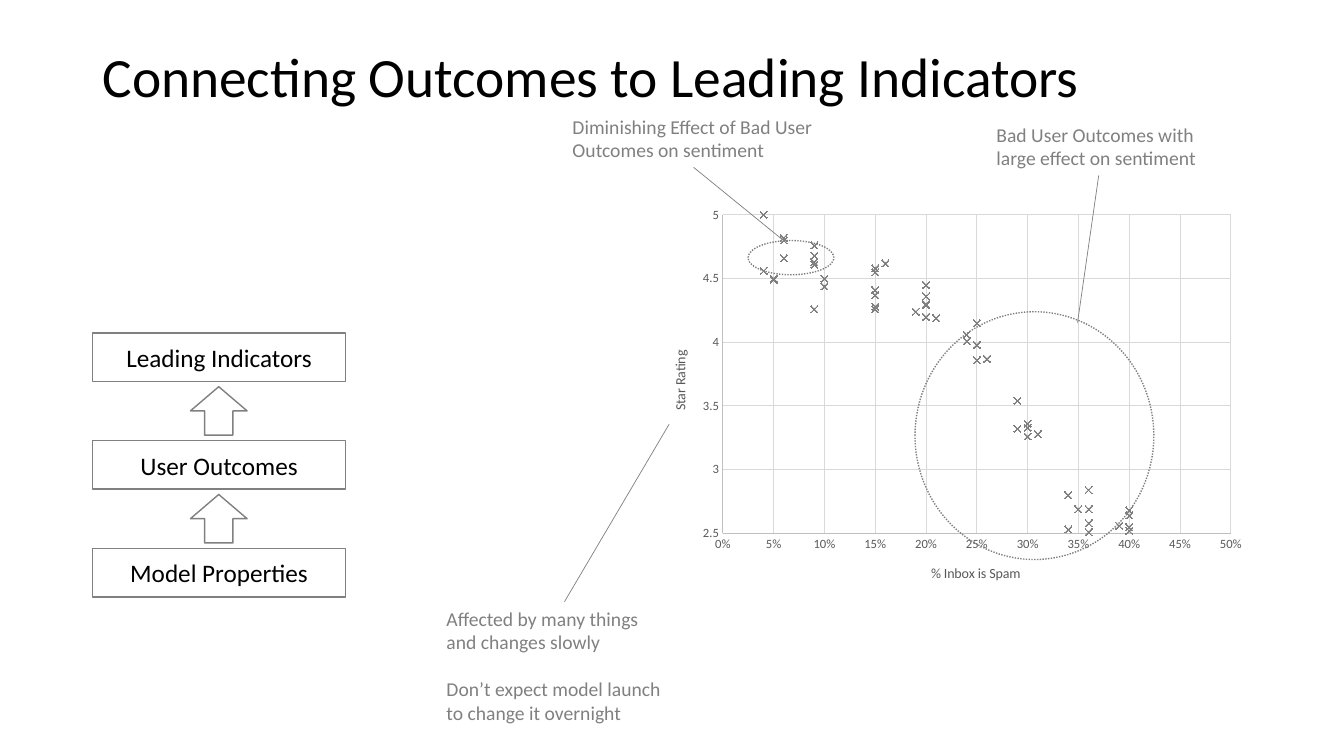
import dataclasses

import lxml.etree
import pptx
import pptx.chart.data
import pptx.dml.color
import pptx.enum.chart
import pptx.enum.dml
import pptx.enum.shapes
import pptx.enum.text
import pptx.oxml
import pptx.oxml.ns
import pptx.util

Pt = pptx.util.Pt
SHAPE = pptx.enum.shapes.MSO_SHAPE
ALIGN = pptx.enum.text.PP_ALIGN
ANCHOR = pptx.enum.text.MSO_ANCHOR


@dataclasses.dataclass(frozen=True)
class Theme:
    font: str = "Calibri"
    ink: str = "000000"
    gray: str = "808080"
    chart_text: str = "595959"
    axis: str = "BFBFBF"
    grid: str = "D9D9D9"
    title_size: float = 39.6
    box_size: float = 18
    note_size: float = 14
    axis_title_size: float = 10
    tick_size: float = 9


SPAM_SHARES = [
    0.05, 0.05, 0.06, 0.06, 0.06, 0.04, 0.04, 0.09, 0.09, 0.09, 0.1, 0.09, 0.1, 0.09,
    0.15, 0.16, 0.15, 0.15, 0.15, 0.15, 0.15, 0.19, 0.2, 0.2, 0.21, 0.2, 0.2, 0.2,
    0.24, 0.25, 0.24, 0.26, 0.24, 0.25, 0.25, 0.3, 0.31, 0.3, 0.29, 0.3, 0.29, 0.3,
    0.36, 0.36, 0.36, 0.34, 0.35, 0.36, 0.34, 0.4, 0.4, 0.4, 0.4, 0.4, 0.4, 0.39,
]
STAR_RATINGS = [
    4.5, 4.49, 4.8, 4.82, 4.66, 4.56, 5, 4.63, 4.76, 4.68, 4.5, 4.26, 4.44, 4.61,
    4.37, 4.62, 4.28, 4.41, 4.55, 4.26, 4.58, 4.24, 4.36, 4.2, 4.19, 4.29, 4.3, 4.45,
    4.06, 3.98, 4.01, 3.87, 4.06, 4.15, 3.86, 3.26, 3.28, 3.33, 3.54, 3.36, 3.32, 3.33,
    2.84, 2.58, 2.69, 2.8, 2.69, 2.51, 2.53, 2.36, 2.68, 2.64, 2.52, 2.55, 2.41, 2.56,
]


def rgb(color):
    return pptx.dml.color.RGBColor.from_string(color)


def set_font(font, name, size, color):
    font.name, font.size, font.bold = name, Pt(size), False
    font.color.rgb = rgb(color)


def set_line(line, color, width, dash=None):
    line.color.rgb = rgb(color)
    line.width = Pt(width)
    if dash:
        line.dash_style = dash


def write(frame, *paragraphs, font, size, color, align=ALIGN.LEFT,
          anchor=ANCHOR.TOP, spacing=None, gap=0):
    frame.word_wrap = True
    frame.vertical_anchor = anchor
    for index, words in enumerate(paragraphs):
        paragraph = frame.add_paragraph() if index else frame.paragraphs[0]
        paragraph.alignment = align
        paragraph.line_spacing = spacing
        paragraph.space_before = Pt(gap if index else 0)
        run = paragraph.add_run()
        run.text = words
        set_font(run.font, font, size, color)


def manual_layout(x, y, w=None, h=None):
    layout = pptx.oxml.parse_xml(f"<c:layout {pptx.oxml.ns.nsdecls('c')}><c:manualLayout/></c:layout>")
    manual = layout[0]
    settings = {"xMode": "edge", "yMode": "edge", "x": x, "y": y}
    if w:
        settings = {"layoutTarget": "inner", **settings, "w": w, "h": h}
    for tag, value in settings.items():
        lxml.etree.SubElement(manual, pptx.oxml.ns.qn(f"c:{tag}")).set("val", str(value))
    return layout


def drop_layout(parent):
    for old in parent.findall(pptx.oxml.ns.qn("c:layout")):
        parent.remove(old)


class SlideBuilder:
    def __init__(self, slide, theme):
        self.slide = slide
        self.theme = theme

    def title(self, words, left, top, width, height):
        heading = self.slide.shapes.title
        heading.left, heading.top = Pt(left), Pt(top)
        heading.width, heading.height = Pt(width), Pt(height)
        heading.text_frame.auto_size = pptx.enum.text.MSO_AUTO_SIZE.NONE
        write(heading.text_frame, words, font=self.theme.font, size=self.theme.title_size,
              color=self.theme.ink, anchor=ANCHOR.MIDDLE, spacing=0.9)

    def outline(self, kind, left, top, width, height, label=None, dash=None):
        figure = self.slide.shapes.add_shape(kind, Pt(left), Pt(top), Pt(width), Pt(height))
        figure.shadow.inherit = False
        figure.fill.background()
        set_line(figure.line, self.theme.gray, 1, dash)
        if label:
            write(figure.text_frame, label, font=self.theme.font, size=self.theme.box_size,
                  color=self.theme.ink, align=ALIGN.CENTER, anchor=ANCHOR.MIDDLE)

    def region(self, left, top, width, height):
        self.outline(SHAPE.OVAL, left, top, width, height,
                     dash=pptx.enum.dml.MSO_LINE.ROUND_DOT)

    def note(self, left, top, width, height, *paragraphs):
        remark = self.slide.shapes.add_textbox(Pt(left), Pt(top), Pt(width), Pt(height))
        write(remark.text_frame, *paragraphs, font=self.theme.font, size=self.theme.note_size,
              color=self.theme.gray, gap=16.8)

    def pointer(self, x1, y1, x2, y2):
        pointer = self.slide.shapes.add_connector(
            pptx.enum.shapes.MSO_CONNECTOR.STRAIGHT, Pt(x1), Pt(y1), Pt(x2), Pt(y2))
        set_line(pointer.line, self.theme.gray, 0.5)
        lxml.etree.SubElement(pointer._element.spPr, pptx.oxml.ns.qn("a:effectLst"))

    def axis(self, axis, title, title_at, low, high, step, number_format):
        theme = self.theme
        axis.minimum_scale, axis.maximum_scale, axis.major_unit = low, high, step
        axis.major_tick_mark = axis.minor_tick_mark = pptx.enum.chart.XL_TICK_MARK.NONE
        axis.has_major_gridlines = True
        set_line(axis.major_gridlines.format.line, theme.grid, 0.75)
        set_line(axis.format.line, theme.axis, 0.75)
        set_font(axis.tick_labels.font, theme.font, theme.tick_size, theme.chart_text)
        axis.tick_labels.number_format = number_format
        axis.tick_labels.number_format_is_linked = False
        caption = axis.axis_title.text_frame.paragraphs[0].add_run()
        caption.text = title
        set_font(caption.font, theme.font, theme.axis_title_size, theme.chart_text)
        heading = axis.axis_title._element
        drop_layout(heading)
        heading.find(pptx.oxml.ns.qn("c:tx")).addnext(manual_layout(*title_at))

    def scatter(self, left, top, width, height):
        ratings = pptx.chart.data.XyChartData()
        points = ratings.add_series("Series 1")
        for spam, stars in zip(SPAM_SHARES, STAR_RATINGS):
            points.add_data_point(spam, stars)
        chart = self.slide.shapes.add_chart(
            pptx.enum.chart.XL_CHART_TYPE.XY_SCATTER,
            Pt(left), Pt(top), Pt(width), Pt(height), ratings).chart
        chart.has_title = chart.has_legend = False
        set_font(chart.font, self.theme.font, self.theme.axis_title_size, self.theme.ink)
        chart.plots[0].vary_by_categories = False
        series = chart.plots[0].series[0]
        series.smooth = False
        series.format.line.fill.background()
        series.marker.style = pptx.enum.chart.XL_MARKER_STYLE.X
        series.marker.size = 5
        series.marker.format.fill.background()
        set_line(series.marker.format.line, self.theme.gray, 0.75)
        self.axis(chart.category_axis, "% Inbox is Spam", (0.46, 0.9), 0, 0.5, 0.05, "0%")
        self.axis(chart.value_axis, "Star Rating", (0.03, 0.37), 2.5, 5, 0.5, "General")
        plot_area = chart._chartSpace.chart.plotArea
        drop_layout(plot_area)
        plot_area.insert(0, manual_layout(0.12, 0.04, 0.84, 0.79))


def main():
    deck = pptx.Presentation()
    deck.slide_width, deck.slide_height = Pt(960), Pt(540)
    builder = SlideBuilder(deck.slides.add_slide(deck.slide_layouts[5]), Theme())
    builder.title("Connecting Outcomes to Leading Indicators", 66, 29, 729, 55)

    stages = ["Leading Indicators", "User Outcomes", "Model Properties"]
    for level, stage in enumerate(stages):
        top = 237.8 + 77 * level
        builder.outline(SHAPE.RECTANGLE, 66, top, 181, 34.6, label=stage)
        if level < len(stages) - 1:
            builder.outline(SHAPE.UP_ARROW, 136, top + 38.4, 40.5, 34.6)

    builder.scatter(464.5, 142, 432, 288)
    builder.region(653.6, 222.7, 170.6, 177)
    builder.note(704.7, 84.2, 160, 41, "Bad User Outcomes with large effect on sentiment")
    builder.pointer(784.8, 125.3, 769.7, 230.4)
    builder.region(534.4, 171.8, 61.2, 24.5)
    builder.note(401.8, 78.5, 186.5, 41, "Diminishing Effect of Bad User Outcomes on sentiment")
    builder.pointer(495.4, 119.5, 560.9, 172.8)
    builder.note(311.8, 429.8, 170, 92, "Affected by many things and changes slowly",
                 "Don’t expect model launch to change it overnight")
    builder.pointer(403.2, 429.8, 478, 303)
    deck.save("out.pptx")


if __name__ == "__main__":
    main()
